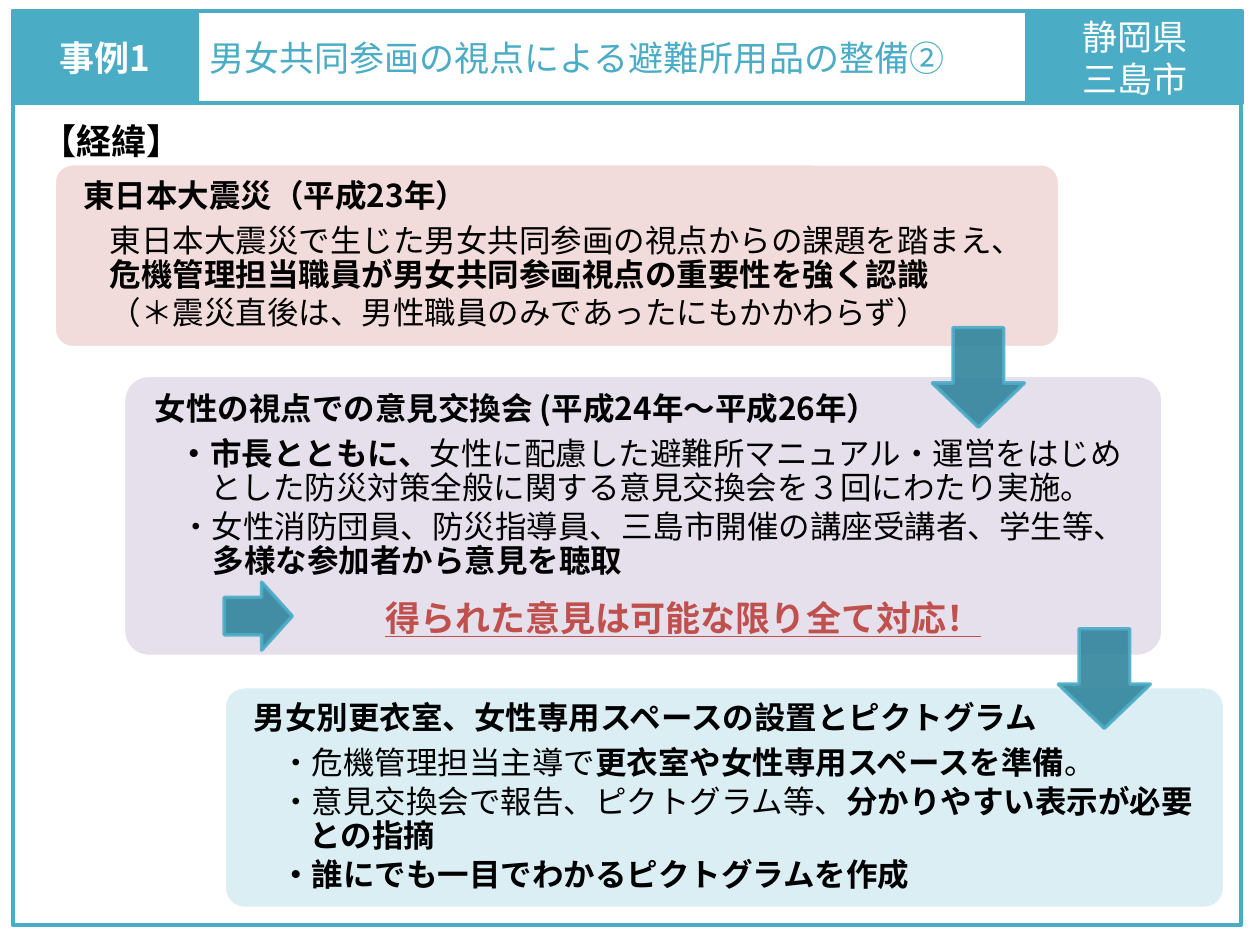
from dataclasses import dataclass
from typing import NamedTuple

from lxml.etree import SubElement
from pptx import Presentation
from pptx.dml.color import RGBColor
from pptx.enum.shapes import MSO_SHAPE
from pptx.enum.text import MSO_ANCHOR, MSO_AUTO_SIZE, PP_ALIGN
from pptx.oxml.ns import qn
from pptx.util import Inches, Pt

COLORS = {
    "teal": "4BACC6", "dark_teal": "31859C", "white": "FFFFFF", "black": "000000",
    "red": "C0504D", "pink": "F2DCDB", "lilac": "E6E0EC", "aqua": "DBEEF4",
}
FONT = "Noto Sans CJK JP"
COLS, ROWS = 100, 75  # slide grid

prs = Presentation()
prs.slide_width, prs.slide_height = Inches(10), Inches(7.5)


class Box(NamedTuple):
    """Left and width in columns, top and height in rows."""
    left: float
    top: float
    width: float
    height: float

    def emu(self) -> list[int]:
        col, row = prs.slide_width / COLS, prs.slide_height / ROWS
        return [round(v * unit) for v, unit in zip(self, (col, row, col, row))]


class Run(NamedTuple):
    text: str
    bold: bool = False


@dataclass
class Para:
    runs: list[Run]
    size: float = 18
    color: str = "black"
    margin: float = 0
    indent: float = 0
    after: float = 0
    spacing: float | None = None
    align: PP_ALIGN = PP_ALIGN.LEFT
    underline: bool = False


@dataclass
class Step:
    box: Box
    fill: str
    radius: float
    paras: list[Para]


class Arrow(NamedTuple):
    preset: MSO_SHAPE
    box: Box
    shaft: float
    head: float


def rgb(name: str) -> RGBColor:
    return RGBColor.from_string(COLORS[name])


def heading(text: str) -> Para:
    return Para([Run(text, True)], margin=0.19, after=6.3, spacing=0.9)


def item(*runs: Run, margin: float = 0.4, indent: float = 0, after: float = 2.7, **style) -> Para:
    return Para(list(runs), margin=margin, indent=indent, after=after, spacing=0.9, **style)


def write(tf, paras: list[Para], insets=(0.1, 0.05, 0.1, 0.05), anchor=MSO_ANCHOR.MIDDLE) -> None:
    tf.word_wrap, tf.vertical_anchor = True, anchor
    tf.margin_left, tf.margin_top, tf.margin_right, tf.margin_bottom = map(Inches, insets)
    for i, para in enumerate(paras):
        p = tf.add_paragraph() if i else tf.paragraphs[0]
        p.alignment, p.line_spacing = para.align, para.spacing
        p.space_before, p.space_after = Pt(0), Pt(para.after)
        pPr = p._p.get_or_add_pPr()
        pPr.set("marL", str(Inches(para.margin)))
        pPr.set("indent", str(Inches(para.indent)))
        p.font.size, p.font.name = Pt(para.size), FONT
        p.font.underline = para.underline
        p.font.color.rgb = rgb(para.color)
        SubElement(pPr.find(qn("a:defRPr")), qn("a:ea"), typeface=FONT)
        for n, run in enumerate(para.runs):
            if n and run.text.startswith("\n"):
                p.add_line_break()
            r = p.add_run()
            r.text, r.font.bold = run.text.strip("\n"), run.bold


def add_shape(preset: MSO_SHAPE, box: Box, fill: str | None, line: str, width: float,
              adjustments: tuple[float, ...] = ()):
    sp = slide.shapes.add_shape(preset, *box.emu())
    sp.shadow.inherit = False
    for i, value in enumerate(adjustments):
        sp.adjustments[i] = value
    if fill:
        sp.fill.solid()
        sp.fill.fore_color.rgb = rgb(fill)
    else:
        sp.fill.background()
    sp.line.color.rgb, sp.line.width = rgb(line), Pt(width)
    return sp


def add_step(step: Step) -> None:
    sp = add_shape(MSO_SHAPE.ROUNDED_RECTANGLE, step.box, step.fill, "white", 2, (step.radius,))
    write(sp.text_frame, step.paras, insets=(0, 0.06, 0.04, 0.06))


def add_arrow(arrow: Arrow) -> None:
    sp = add_shape(arrow.preset, arrow.box, "dark_teal", "teal", 2, (arrow.shaft, arrow.head))
    for color in sp._element.spPr.iter(qn("a:srgbClr")):
        SubElement(color, qn("a:alpha"), val="90000")


def add_tag(box: Box, lines: list[str], bold: bool = False) -> None:
    sp = add_shape(MSO_SHAPE.RECTANGLE, box, "teal", "teal", 2.25)
    write(sp.text_frame, [Para([Run(t, bold)], 20, "white", align=PP_ALIGN.CENTER) for t in lines])


STEPS = [
    Step(Box(4.3, 13, 79.8, 14.6), "pink", 0.1, [
        heading("東日本大震災（平成23年）"),
        item(Run("東日本大震災で生じた男女共同参画の視点からの課題を踏まえ、"),
             Run("\n危機管理担当職員が男女共同参画視点の重要性を強く認識", True)),
        item(Run("（＊震災直後は、男性職員のみであったにもかかわらず）")),
    ]),
    Step(Box(9.8, 29.8, 82.5, 22.3), "lilac", 0.09, [
        heading("女性の視点での意見交換会 (平成24年〜平成26年）"),
        item(Run("・市長とともに、", True),
             Run("女性に配慮した避難所マニュアル・運営をはじめとした防災対策全般に関する"
                 "意見交換会を３回にわたり実施。"), margin=0.63, indent=-0.25),
        item(Run("・女性消防団員、防災指導員、三島市開催の講座受講者、学生等、"),
             Run("多様な参加者から意見を聴取", True), margin=0.65, indent=-0.26, after=12.5),
        item(Run("得られた意見は可能な限り全て対応！", True),
             margin=2.02, size=20, color="red", underline=True),
    ]),
    Step(Box(17.8, 54.5, 79.4, 17.6), "aqua", 0.09, [
        heading("男女別更衣室、女性専用スペースの設置とピクトグラム"),
        item(Run("・危機管理担当主導で"), Run("更衣室や女性専用スペースを準備", True), Run("。")),
        item(Run("・意見交換会で報告、ピクトグラム等、"),
             Run("分かりやすい表示が必要との指摘", True), margin=0.63, indent=-0.23),
        item(Run("・誰にでも一目でわかるピクトグラムを作成", True)),
    ]),
]
ARROWS = [
    Arrow(MSO_SHAPE.DOWN_ARROW, Box(74, 26, 7.3, 7.9), 0.55, 0.48),
    Arrow(MSO_SHAPE.RIGHT_ARROW, Box(17.8, 46.2, 5.4, 5.4), 0.55, 0.45),
    Arrow(MSO_SHAPE.DOWN_ARROW, Box(84, 49.9, 7.3, 7.9), 0.55, 0.48),
]

slide = prs.slides.add_slide(prs.slide_layouts[5])

# Header: title between two tags
title = slide.shapes.title
title.left, title.top, title.width, title.height = Box(15.6, 0.9, 82.9, 7.3).emu()
title.line.color.rgb, title.line.width = rgb("teal"), Pt(2.25)
title.text_frame.auto_size = MSO_AUTO_SIZE.NONE
write(title.text_frame, [Para([Run("男女共同参画の視点による避難所用品の整備②")], 20, "teal")])
add_tag(Box(1, 0.9, 14.6, 7.3), ["事例1"], bold=True)
add_tag(Box(81.5, 0.9, 17.1, 7.3), ["静岡県", "三島市"])

# Frame and section label
add_shape(MSO_SHAPE.RECTANGLE, Box(1, 0.9, 97.5, 72.5), None, "teal", 2.25)
label = slide.shapes.add_textbox(*Box(2.3, 9, 83.2, 4.4).emu())
write(label.text_frame, [Para([Run("【経緯】", True)], 20)], anchor=MSO_ANCHOR.TOP)

# Steps and the arrows that join them
for step in STEPS:
    add_step(step)
for arrow in ARROWS:
    add_arrow(arrow)

prs.save("out.pptx")
